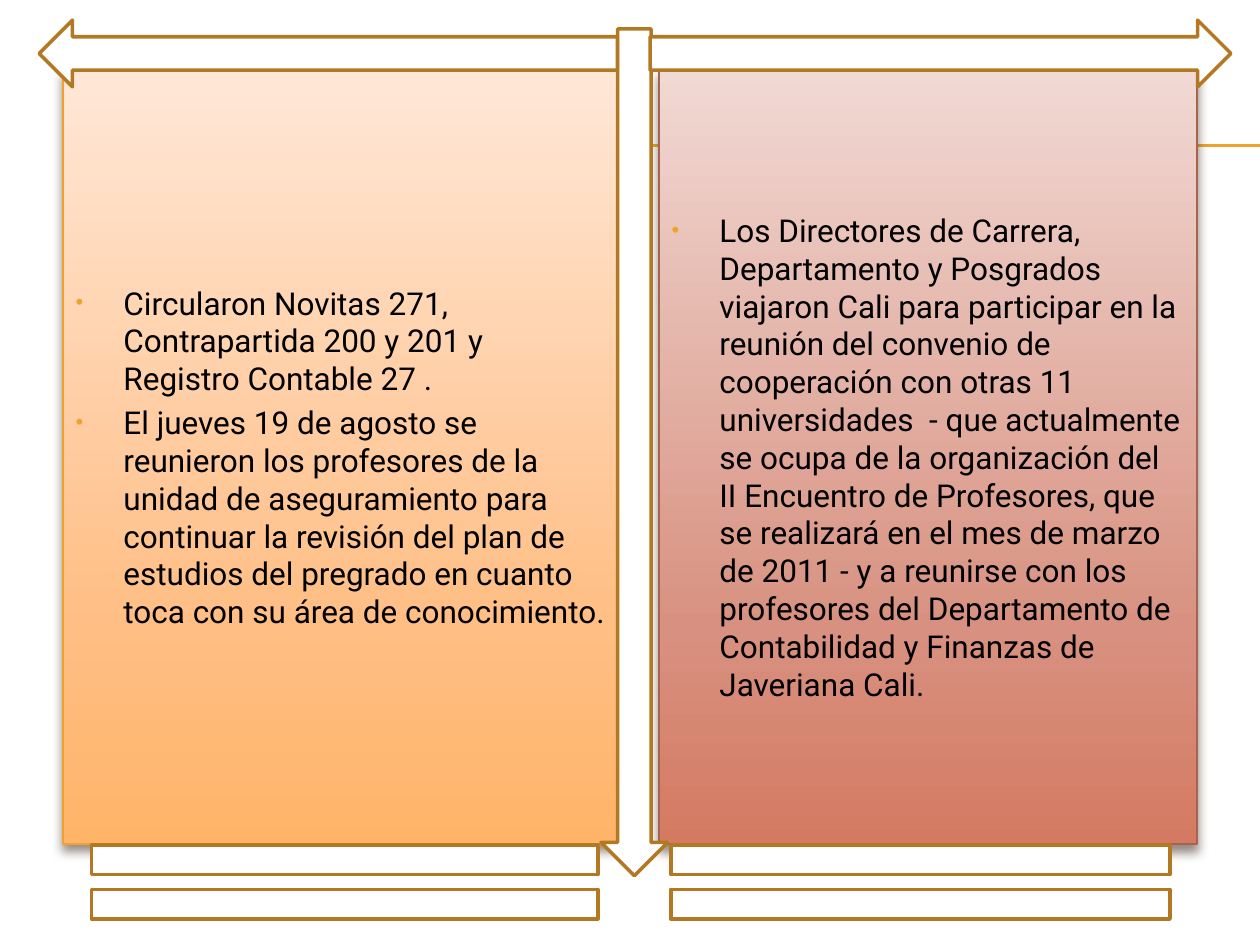
from copy import deepcopy
from dataclasses import dataclass

from lxml import etree
from pptx import Presentation
from pptx.dml.color import RGBColor
from pptx.enum import shapes, text
from pptx.oxml import ns
from pptx.util import Inches, Pt

AMBER = RGBColor(0xF0, 0xA2, 0x2E)
BROWN = RGBColor(0xB2, 0x78, 0x22)
RUST = RGBColor(0xA5, 0x64, 0x4E)
SHADOW = RGBColor(0x4E, 0x3B, 0x30)
WHITE = RGBColor(0xFF, 0xFF, 0xFF)
BLACK = RGBColor(0x00, 0x00, 0x00)
PEACH_STOPS = (RGBColor(0xFF, 0xE7, 0xD7), RGBColor(0xFF, 0xBE, 0x84), RGBColor(0xFF, 0xB4, 0x68))
ROSE_STOPS = (RGBColor(0xF1, 0xD9, 0xD4), RGBColor(0xD8, 0x91, 0x80), RGBColor(0xD4, 0x7A, 0x62))
STOP_POSITIONS = (0, 0.72, 1)
PANEL_TOP, PANEL_HEIGHT = 0.55, 6.15


@dataclass
class Panel:
    left: float
    width: float
    stops: tuple[RGBColor, ...]
    border: RGBColor
    items: list[str]


@dataclass
class Outline:
    kind: shapes.MSO_SHAPE
    left: float
    top: float
    width: float
    height: float


PANELS = [
    Panel(0.5, 4.42, PEACH_STOPS, AMBER, [
        "Circularon Novitas 271, Contrapartida 200 y 201 y Registro Contable 27 .",
        "El jueves 19 de agosto se reunieron los profesores de la unidad de aseguramiento "
        "para continuar la revisión del plan de estudios del pregrado en cuanto toca con "
        "su área de conocimiento.",
    ]),
    Panel(5.23, 4.27, ROSE_STOPS, RUST, [
        "Los Directores de Carrera, Departamento y Posgrados viajaron Cali para participar "
        "en la reunión del convenio de cooperación con otras 11 universidades  - que "
        "actualmente se ocupa de la organización del II Encuentro de Profesores, que se "
        "realizará en el mes de marzo de 2011 - y a reunirse con los profesores del "
        "Departamento de Contabilidad y Finanzas de Javeriana Cali.",
    ]),
]

OUTLINES = [
    Outline(shapes.MSO_SHAPE.DOWN_ARROW, 4.77, 0.23, 0.53, 6.72),
    Outline(shapes.MSO_SHAPE.RIGHT_ARROW, 5.16, 0.16, 4.61, 0.53),
    Outline(shapes.MSO_SHAPE.LEFT_ARROW, 0.31, 0.16, 4.59, 0.53),
    Outline(shapes.MSO_SHAPE.MATH_EQUAL, 0, 6.5, 5.47, 1),
    Outline(shapes.MSO_SHAPE.MATH_EQUAL, 4.61, 6.5, 5.39, 1),
]


def add_child(parent, tag: str, **attributes: str):
    return etree.SubElement(parent, ns.qn(tag), attributes)


def draw_rule(page, height: float) -> None:
    rule = page.shapes.add_connector(
        shapes.MSO_CONNECTOR.STRAIGHT, Inches(0.56), Inches(height), Inches(10), Inches(height))
    rule.line.color.rgb = AMBER
    rule.line.width = Pt(0.75)
    add_child(rule._element.spPr, "a:effectLst")
    page.shapes._spTree.insert(2, rule._element)


def fill_gradient(box, colors: tuple[RGBColor, ...]) -> None:
    box.fill.gradient()
    box.fill.gradient_angle = 270
    stop_list = box._element.spPr.find(".//" + ns.qn("a:gsLst"))
    stop_list.append(deepcopy(stop_list[0]))
    for stop, position, color in zip(box.fill.gradient_stops, STOP_POSITIONS, colors):
        stop.position = position
        stop.color.rgb = color


def add_shadow(box) -> None:
    effects = add_child(box._element.spPr, "a:effectLst")
    shadow = add_child(effects, "a:outerShdw", blurRad=str(Pt(6)), dist=str(Pt(4)),
                       dir="5400000", rotWithShape="0")
    color = add_child(shadow, "a:srgbClr", val=str(SHADOW))
    add_child(color, "a:alpha", val="60000")


def format_item(para, is_first: bool) -> None:
    properties = para._p.get_or_add_pPr()
    properties.set("marL", str(Inches(0.38)))
    properties.set("indent", str(Inches(-0.38)))
    add_child(add_child(properties, "a:buClr"), "a:srgbClr", val=str(AMBER))
    add_child(properties, "a:buSzPct", val="70000")
    add_child(properties, "a:buFont", typeface="Arial")
    add_child(properties, "a:buChar", char="•")
    para.space_before = Pt(0 if is_first else 3.6)
    for span in para.runs:
        span.font.name = "Roboto"
        span.font.size = Pt(18)
        span.font.color.rgb = BLACK


def draw_panel(box, panel: Panel) -> None:
    box.left, box.top = Inches(panel.left), Inches(PANEL_TOP)
    box.width, box.height = Inches(panel.width), Inches(PANEL_HEIGHT)
    fill_gradient(box, panel.stops)
    box.line.color.rgb = panel.border
    box.line.width = Pt(0.79)
    add_shadow(box)
    frame = box.text_frame
    frame.text = "\n".join(panel.items)
    frame.word_wrap = True
    frame.auto_size = text.MSO_AUTO_SIZE.NONE
    frame.vertical_anchor = text.MSO_ANCHOR.MIDDLE
    for index, para in enumerate(frame.paragraphs):
        format_item(para, index == 0)


def draw_outline(page, outline: Outline) -> None:
    shape = page.shapes.add_shape(
        outline.kind, Inches(outline.left), Inches(outline.top),
        Inches(outline.width), Inches(outline.height))
    shape.shadow.inherit = False
    shape.fill.solid()
    shape.fill.fore_color.rgb = WHITE
    shape.line.color.rgb = BROWN
    shape.line.width = Pt(2)


def main() -> None:
    deck = Presentation()
    deck.slide_width, deck.slide_height = Inches(10), Inches(7.5)
    page = deck.slides.add_slide(deck.slide_layouts.get_by_name("Two Content"))
    title = page.shapes.title._element
    title.getparent().remove(title)
    for height in (1.16, 1.15):
        draw_rule(page, height)
    for box, panel in zip(page.placeholders, PANELS):
        draw_panel(box, panel)
    for outline in OUTLINES:
        draw_outline(page, outline)
    deck.save("out.pptx")


if __name__ == "__main__":
    main()
